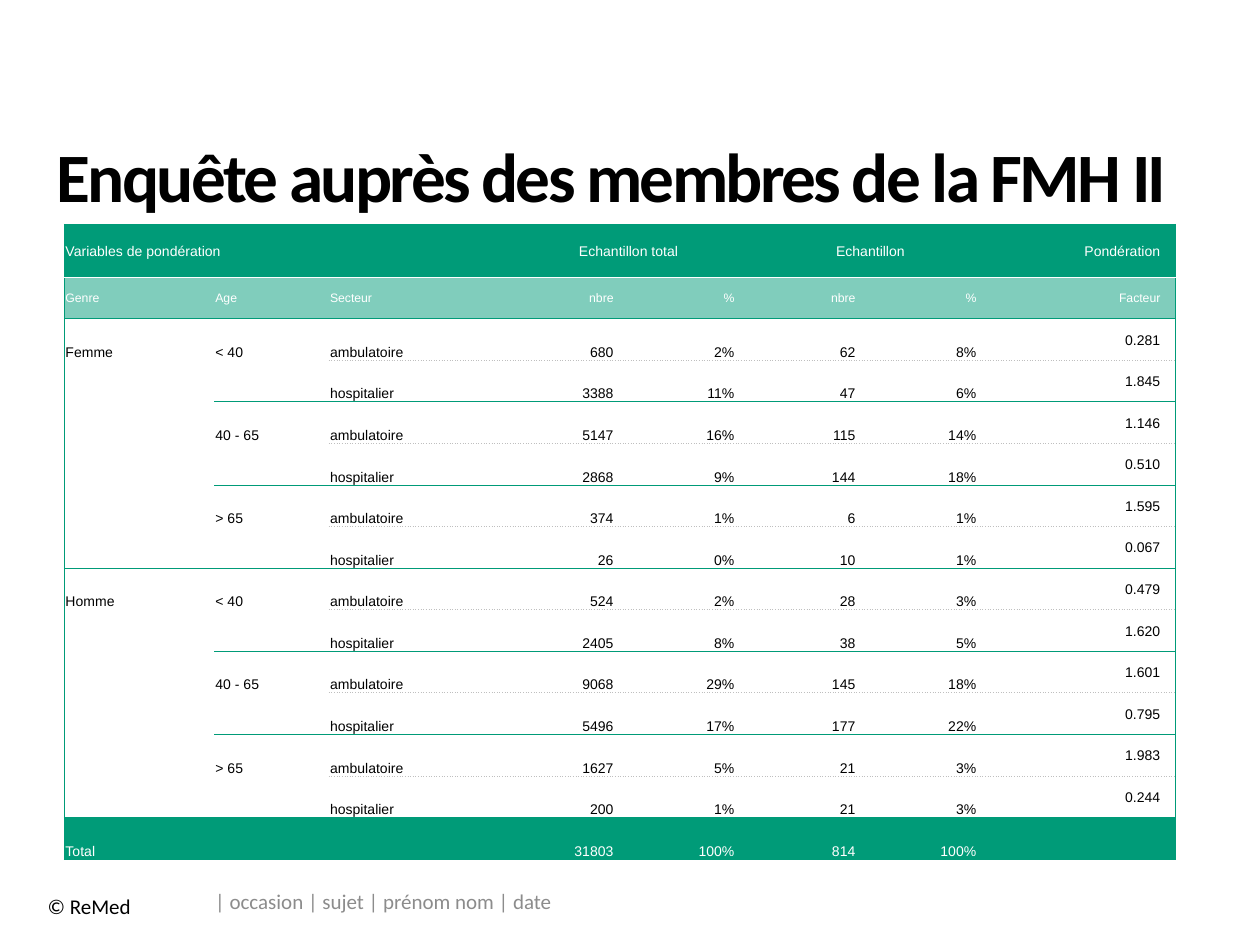
import itertools

import pptx
import pptx.dml.color
import pptx.enum.text
import pptx.oxml
import pptx.oxml.ns
import pptx.util

Inches, Pt = pptx.util.Inches, pptx.util.Pt
RGBColor = pptx.dml.color.RGBColor
ALIGN = pptx.enum.text.PP_ALIGN
ANCHOR = pptx.enum.text.MSO_ANCHOR

GREEN = RGBColor(0x00, 0x9B, 0x78)
LIGHT_GREEN = RGBColor(0x80, 0xCD, 0xBC)
WHITE = RGBColor(0xFF, 0xFF, 0xFF)
BLACK = RGBColor(0x00, 0x00, 0x00)
GREY = RGBColor(0x8C, 0x8C, 0x8C)
DOT_GREY = RGBColor(0xBF, 0xBF, 0xBF)

COLUMN_WIDTHS = [1.19, 0.91, 1.42, 0.96, 0.96, 0.96, 0.96, 1.46]
HEADER_HEIGHT, ROW_HEIGHT = 0.42, 0.33
HEADER_SPANS = [(0, 2), (3, 4), (5, 6)]

GROUP_HEADINGS = ["Variables de pondération", "", "", "Echantillon total", "",
                  "Echantillon", "", "Pondération"]
COLUMN_HEADINGS = ["Genre", "Age", "Secteur", "nbre", "%", "nbre", "%", "Facteur"]
GENDERS = ["Femme", "Homme"]
AGES = ["< 40", "40 - 65", "> 65"]
SECTORS = ["ambulatoire", "hospitalier"]
FIGURES = [
    ["680", "2%", "62", "8%", "0.281"],
    ["3388", "11%", "47", "6%", "1.845"],
    ["5147", "16%", "115", "14%", "1.146"],
    ["2868", "9%", "144", "18%", "0.510"],
    ["374", "1%", "6", "1%", "1.595"],
    ["26", "0%", "10", "1%", "0.067"],
    ["524", "2%", "28", "3%", "0.479"],
    ["2405", "8%", "38", "5%", "1.620"],
    ["9068", "29%", "145", "18%", "1.601"],
    ["5496", "17%", "177", "22%", "0.795"],
    ["1627", "5%", "21", "3%", "1.983"],
    ["200", "1%", "21", "3%", "0.244"],
]
TOTALS = ["Total", "", "", "31803", "100%", "814", "100%", ""]


def survey_rows():
    """Return all table rows, naming each gender and age only once per group."""
    rows = [GROUP_HEADINGS, COLUMN_HEADINGS]
    groups = itertools.product(GENDERS, AGES, SECTORS)
    for (gender, age, sector), figures in zip(groups, FIGURES):
        starts_age = sector == SECTORS[0]
        starts_gender = starts_age and age == AGES[0]
        rows.append([gender if starts_gender else "", age if starts_age else "",
                     sector] + figures)
    return rows + [TOTALS]


def rule_above(row, column, total_row):
    """Return colour and dash of the line over a cell, or None."""
    if row == 1:
        return WHITE, "solid"
    if row in (0, 2) or row >= total_row:
        return GREEN, "solid"
    if row % 2:
        return (DOT_GREY, "sysDot") if column >= 2 else None
    starts_gender = (row - 2) % (len(AGES) * len(SECTORS)) == 0
    return (GREEN, "solid") if column >= 1 or starts_gender else None


class SlideBuilder:
    def __init__(self, slide, text_font, table_font):
        self.slide = slide
        self.text_font = text_font
        self.table_font = table_font

    def add_run(self, frame, text, align=ALIGN.LEFT, **font_values):
        paragraph = frame.paragraphs[0]
        paragraph.alignment = align
        run = paragraph.add_run()
        run.text = text
        color = font_values.pop("color")
        for name, value in font_values.items():
            setattr(run.font, name, value)
        run.font.color.rgb = color
        return run

    def title(self, text, left, top, width, height):
        heading = self.slide.shapes.title
        place = {"left": left, "top": top, "width": width, "height": height}
        for name, value in place.items():
            setattr(heading, name, Inches(value))
        heading.text_frame.vertical_anchor = ANCHOR.MIDDLE
        run = self.add_run(heading.text_frame, text, name=self.text_font,
                           size=Pt(39.6), bold=True, color=BLACK)
        run._r.get_or_add_rPr().set("spc", "-150")

    def text(self, text, left, top, width, height, color, anchor):
        box = self.slide.shapes.add_textbox(
            Inches(left), Inches(top), Inches(width), Inches(height))
        box.text_frame.word_wrap = True
        box.text_frame.vertical_anchor = anchor
        self.add_run(box.text_frame, text, name=self.text_font, size=Pt(12), color=color)

    def border(self, cell, side, rule):
        line = pptx.oxml.parse_xml(
            f'<a:{side} {pptx.oxml.ns.nsdecls("a")} w="6350"/>')
        if rule:
            color, dash = rule
            line.append(pptx.oxml.parse_xml(
                f'<a:solidFill {pptx.oxml.ns.nsdecls("a")}>'
                f'<a:srgbClr val="{color}"/></a:solidFill>'))
            line.append(pptx.oxml.parse_xml(
                f'<a:prstDash {pptx.oxml.ns.nsdecls("a")} val="{dash}"/>'))
        else:
            line.append(pptx.oxml.parse_xml(
                f'<a:noFill {pptx.oxml.ns.nsdecls("a")}/>'))
        cell._tc.get_or_add_tcPr().append(line)

    def cell(self, cell, text, fill, align, rules, anchor, size, color):
        values = {
            "margin_left": Inches(0.01),
            "margin_top": Inches(0.01),
            "margin_right": Inches(0.12 if align == ALIGN.RIGHT else 0.01),
            "margin_bottom": 0,
            "vertical_anchor": anchor,
        }
        for name, value in values.items():
            setattr(cell, name, value)
        for side, rule in rules.items():
            self.border(cell, side, rule)
        if fill is None:
            cell.fill.background()
        else:
            cell.fill.solid()
            cell.fill.fore_color.rgb = fill
        if text:
            self.add_run(cell.text_frame, text, align, name=self.table_font,
                         size=Pt(size), color=color)

    def survey_table(self, rows, left, top):
        heights = [HEADER_HEIGHT] + [ROW_HEIGHT] * (len(rows) - 1)
        table = self.slide.shapes.add_table(
            len(rows), len(COLUMN_WIDTHS), Inches(left), Inches(top),
            Inches(sum(COLUMN_WIDTHS)), Inches(sum(heights))).table
        table.first_row = table.horz_banding = False
        for column, width in zip(table.columns, COLUMN_WIDTHS):
            column.width = Inches(width)
        for row, height in zip(table.rows, heights):
            row.height = Inches(height)
        for first, last in HEADER_SPANS:
            table.cell(0, first).merge(table.cell(0, last))

        total_row, last_column = len(rows) - 1, len(COLUMN_WIDTHS) - 1
        fills = {0: GREEN, 1: LIGHT_GREEN, total_row: GREEN}
        outline = (GREEN, "solid")
        for r, texts in enumerate(rows):
            for c, text in enumerate(texts):
                align = ALIGN.RIGHT if c >= 3 else ALIGN.LEFT
                if r == 0 and 3 <= c < last_column:
                    align = ALIGN.CENTER
                rules = {
                    "lnL": outline if c == 0 else None,
                    "lnR": outline if c == last_column else None,
                    "lnT": rule_above(r, c, total_row),
                    "lnB": rule_above(r + 1, c, total_row),
                }
                centred = r < 2 or c == last_column
                self.cell(table.cell(r, c), text, fills.get(r), align, rules,
                          anchor=ANCHOR.MIDDLE if centred else ANCHOR.BOTTOM,
                          size=7 if r == 1 else 8,
                          color=WHITE if r in fills else BLACK)


def main():
    presentation = pptx.Presentation()
    presentation.slide_width, presentation.slide_height = Inches(10), Inches(7.5)
    slide = presentation.slides.add_slide(presentation.slide_layouts[5])
    builder = SlideBuilder(slide, text_font="Calibri", table_font="Arial")
    builder.title("Enquête auprès des membres de la FMH II", 0.35, 1.07, 9.16, 0.63)
    builder.text("| occasion | sujet | prénom nom | date", 1.61, 6.95, 4.97, 0.4,
                 GREY, ANCHOR.MIDDLE)
    builder.text("© ReMed", 0.28, 7.04, 1.34, 0.3, BLACK, ANCHOR.TOP)
    builder.survey_table(survey_rows(), 0.51, 1.78)
    presentation.save("out.pptx")


if __name__ == "__main__":
    main()
